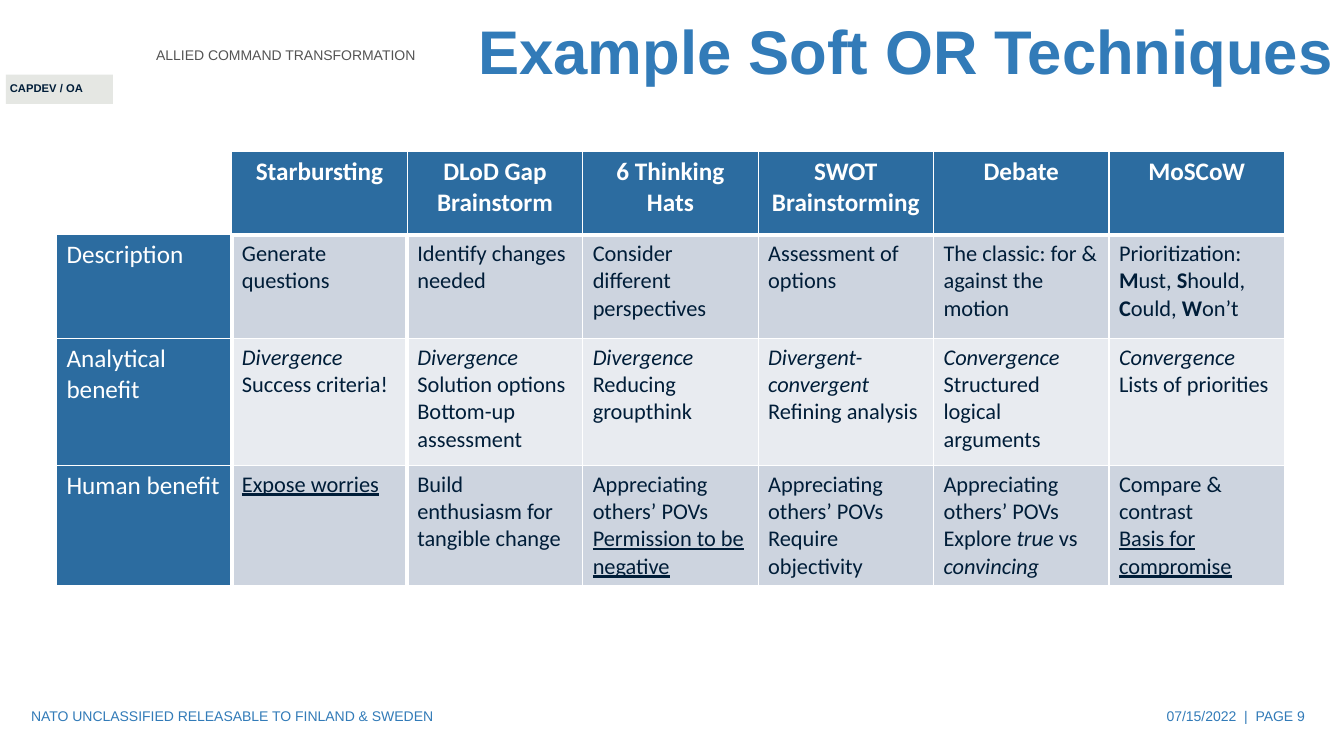
import dataclasses

import pptx
import pptx.dml.color
import pptx.enum.shapes
import pptx.enum.text
import pptx.oxml
import pptx.oxml.ns
import pptx.util

ALIGN = pptx.enum.text.PP_ALIGN
ANCHOR = pptx.enum.text.MSO_ANCHOR
INCH = pptx.util.Inches


@dataclasses.dataclass(frozen=True)
class Theme:
    blue: str = "327BB8"
    head: str = "2C6CA0"
    navy: str = "001D38"
    grey: str = "545454"
    tag: str = "E5E7E3"
    dark: str = "CDD4DF"
    light: str = "E8EBF0"
    white: str = "FFFFFF"
    sans: str = "Arial"
    body: str = "Calibri"
    title: int = 44
    label: int = 18
    cell: int = 16
    small: int = 10
    tiny: int = 8
    thin: int = 1
    thick: int = 3


THEME = Theme()
WIDE, HIGH = 13.33, 7.5
SPLIT = "~"
MARKS = {"*": "bold", "/": "italic", "_": "underline"}
ROWS = [
    ["", "Starbursting", "DLoD Gap Brainstorm", "6 Thinking Hats",
     "SWOT Brainstorming", "Debate", "MoSCoW"],
    ["Description", "Generate questions", "Identify changes needed",
     "Consider different perspectives", "Assessment of options",
     "The classic: for & against the motion",
     "Prioritization: ~*M~ust, ~*S~hould, ~*C~ould, ~*W~on’t"],
    ["Analytical benefit", "/Divergence\nSuccess criteria!",
     "/Divergence\nSolution options\nBottom-up assessment",
     "/Divergence\nReducing groupthink",
     "/Divergent-convergent\nRefining analysis",
     "/Convergence\nStructured logical arguments",
     "/Convergence\nLists of priorities"],
    ["Human benefit", "_Expose worries",
     "Build enthusiasm for tangible change",
     "Appreciating others’ POVs\n_Permission to be negative",
     "Appreciating others’ POVs\nRequire objectivity",
     "Appreciating others’ POVs\nExplore ~/true ~vs ~/convincing",
     "Compare & contrast\n_Basis for compromise"],
]
TALL = [0.83, 1.03, 1.26, 1.19]


def apply(thing, form):
    for name, value in form.items():
        setattr(thing, name, value)


def tint(text):
    return pptx.dml.color.RGBColor.from_string(text)


def paint(thing, color):
    thing.fill.solid()
    thing.fill.fore_color.rgb = tint(color)


def write(frame, text, size, color, face=THEME.sans, bold=False, align=ALIGN.LEFT):
    for spot, line in enumerate(text.split("\n")):
        para = frame.add_paragraph() if spot else frame.paragraphs[0]
        para.alignment = align
        for part in line.split(SPLIT):
            mark = MARKS.get(part[:1])
            run = para.add_run()
            run.text = part[1:] if mark else part
            form = {"name": face, "size": pptx.util.Pt(size), "bold": bold}
            if mark:
                form[mark] = True
            apply(run.font, form)
            run.font.color.rgb = tint(color)


def note(slide, box, text, wrap=True, anchor=ANCHOR.MIDDLE, **form):
    frame = slide.shapes.add_textbox(*map(INCH, box)).text_frame
    apply(frame, {"word_wrap": wrap, "vertical_anchor": anchor})
    write(frame, text, **form)


def badge(slide, box):
    left, top, width, height = box
    plate = slide.shapes.add_shape(pptx.enum.shapes.MSO_SHAPE.RECTANGLE,
                                   *map(INCH, box))
    plate.shadow.inherit = False
    paint(plate, THEME.tag)
    plate.line.fill.background()
    note(slide, (left - 0.06, top + 0.02, 0.93, 0.24), "CAPDEV / OA",
         wrap=False, anchor=ANCHOR.TOP, size=THEME.tiny, color=THEME.navy,
         bold=True)


def banner(slide, box):
    left, top, width, height = box
    note(slide, (left + 1.45, top + 0.25, 5.91, 0.59),
         "ALLIED COMMAND TRANSFORMATION", size=THEME.small, color=THEME.grey)
    badge(slide, (left + 0.06, top + 0.74, 1.06, 0.29))
    title = slide.shapes.title
    inset = 1.83
    apply(title, {"left": INCH(left + inset), "top": INCH(top),
                  "width": INCH(width - inset), "height": INCH(height)})
    frame = title.text_frame
    apply(frame, {"word_wrap": True, "vertical_anchor": ANCHOR.MIDDLE,
                  "auto_size": pptx.enum.text.MSO_AUTO_SIZE.NONE})
    write(frame, "Example Soft OR Techniques", THEME.title, THEME.blue,
          bold=True, align=ALIGN.RIGHT)
    frame.paragraphs[0].line_spacing = 0.9


def footer(slide, box):
    left, top, width, height = box
    stamp = 3
    form = {"size": THEME.small, "color": THEME.blue}
    note(slide, (left + width - stamp, top, stamp, height),
         "07/15/2022  |  PAGE 9", align=ALIGN.RIGHT, **form)
    note(slide, (left, top, 4.5, height),
         "NATO UNCLASSIFIED RELEASABLE TO FINLAND & SWEDEN", **form)


def edge(cell, row, col):
    heavy = {"L": row > 0 and col in (1, 2), "R": row > 0 and col in (0, 1),
             "T": row == 1 and col > 0, "B": row == 0 and col > 0}
    props = cell._tc.get_or_add_tcPr()
    for side, bold in heavy.items():
        width = pptx.util.Pt(THEME.thick if bold else THEME.thin)
        props.append(pptx.oxml.parse_xml(
            f'<a:ln{side} {pptx.oxml.ns.nsdecls("a")} w="{width}"><a:solidFill>'
            f'<a:srgbClr val="{THEME.white}"/></a:solidFill></a:ln{side}>'))


def fill(cell, text, row, col):
    edge(cell, row, col)
    if not text:
        cell.fill.background()
    elif row == 0 or col == 0:
        paint(cell, THEME.head)
        write(cell.text_frame, text, THEME.label, THEME.white, THEME.body,
              bold=row == 0, align=ALIGN.LEFT if row else ALIGN.CENTER)
    else:
        paint(cell, THEME.dark if row % 2 else THEME.light)
        write(cell.text_frame, text, THEME.cell, THEME.navy, THEME.body)


def matrix(slide, box):
    count = len(ROWS[0])
    table = slide.shapes.add_table(len(ROWS), count, *map(INCH, box)).table
    apply(table, {"first_row": False, "horz_banding": False})
    for column in table.columns:
        column.width = INCH(box[2] / count)
    for row, texts in enumerate(ROWS):
        table.rows[row].height = INCH(TALL[row])
        for col, text in enumerate(texts):
            fill(table.cell(row, col), text, row, col)


def main():
    deck = pptx.Presentation()
    apply(deck, {"slide_width": INCH(WIDE), "slide_height": INCH(HIGH)})
    slide = deck.slides.add_slide(deck.slide_layouts[5])
    banner(slide, (0, 0, WIDE, 1.08))
    footer(slide, (0.21, HIGH * 0.92, 12.83, 0.4))
    matrix(slide, (0.56, HIGH * 0.2, 12.18, sum(TALL)))
    deck.save("out.pptx")


if __name__ == "__main__":
    main()
